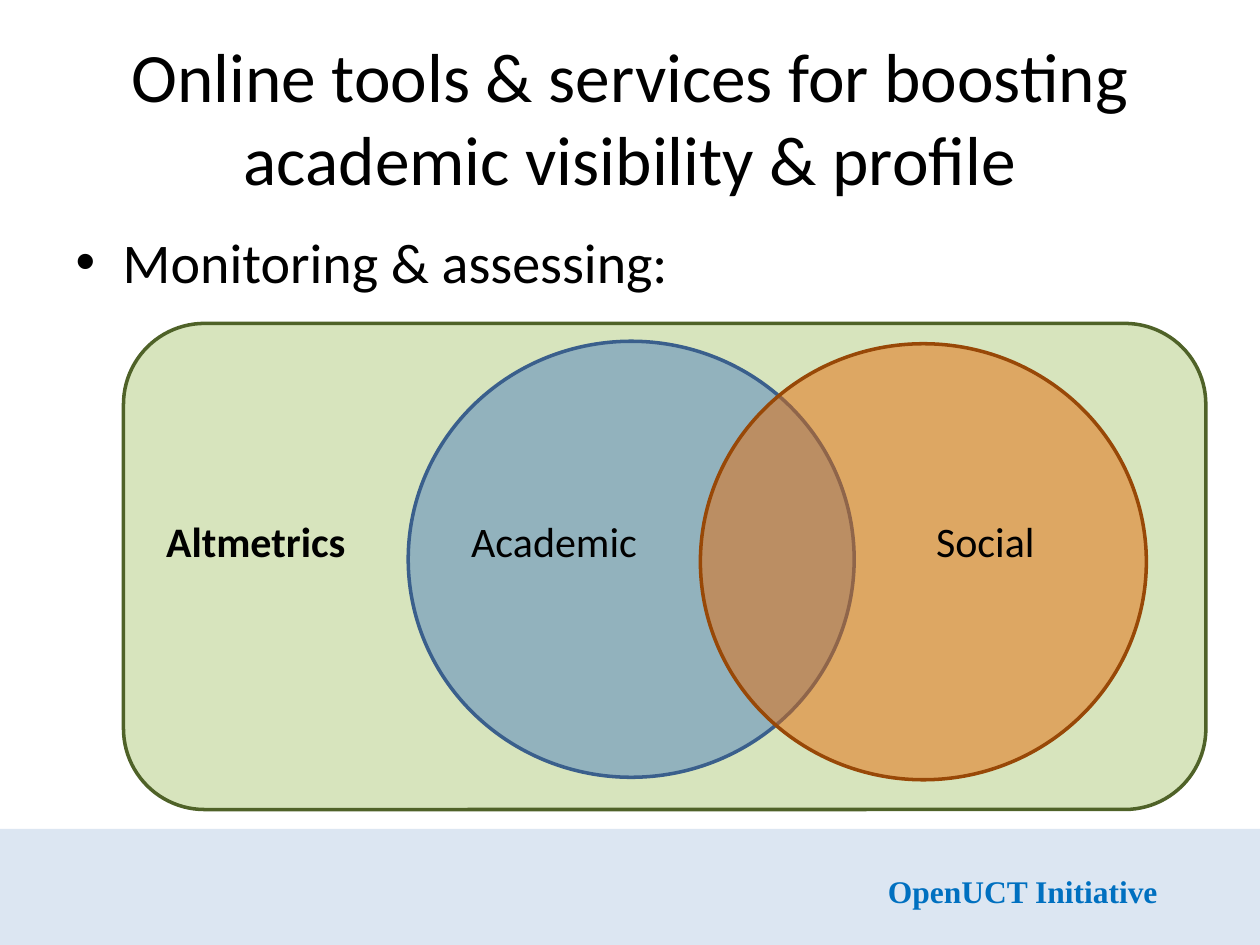
"""Build a slide with a Venn diagram of academic and social altmetrics."""
from dataclasses import dataclass

from lxml.etree import SubElement
from pptx import Presentation
from pptx.dml.color import RGBColor
from pptx.enum.shapes import MSO_SHAPE as Preset
from pptx.enum.text import MSO_ANCHOR as Anchor, MSO_AUTO_SIZE as AutoSize, PP_ALIGN as Align
from pptx.oxml.ns import qn
from pptx.util import Cm, Pt


@dataclass(frozen=True)
class Theme:
    font: str = "Calibri"
    footer_font: str = "Times New Roman"
    text: str = "000000"
    footer_text: str = "0070C0"
    footer_fill: str = "DCE6F2"
    title_size: float = 39.6
    body_size: float = 32
    label_size: float = 24
    footer_size: float = 18
    line_width: float = 2


THEME = Theme()
SLIDE_WIDTH, SLIDE_HEIGHT = 25.4, 19.05

TITLE = "Online tools & services for boosting academic visibility & profile"
BULLET = "Monitoring & assessing:"
FOOTER = "OpenUCT Initiative"

FRAME = {"box": (2.49, 6.52, 21.82, 9.8), "fill": "D7E4BD", "line": "4F6228"}
CIRCLE_SIZE = (8.99, 8.79)
CIRCLES = [
    {"corner": (8.23, 6.88), "fill": "4F81BD", "line": "3A5F8C"},
    {"corner": (14.12, 6.93), "fill": "E46C0A", "line": "984807"},
]
LABEL_TOP, LABEL_HEIGHT = 10.26, 1.28
LABELS = [
    ("Altmetrics", 3.1, 5.16, True),
    ("Academic", 9.25, 3.89, False),
    ("Social", 18.62, 3.89, False),
]
FOOTER_HEIGHT = 2.34


def lengths(box):
    return [Cm(value) for value in box]


def place(shape, box):
    shape.left, shape.top, shape.width, shape.height = lengths(box)


def write(shape, text, size, font=THEME.font, color=THEME.text, bold=False, align=Align.LEFT,
          anchor=Anchor.TOP, wrap=True, auto_size=AutoSize.NONE, bullet_indent=None):
    frame = shape.text_frame
    frame.word_wrap = wrap
    frame.auto_size = auto_size
    frame.vertical_anchor = anchor
    paragraph = frame.paragraphs[0]
    paragraph.text = text
    paragraph.alignment = align
    paragraph.space_before = Pt(0)
    if bullet_indent:
        properties = paragraph._p.get_or_add_pPr()
        properties.set("marL", str(Cm(bullet_indent)))
        properties.set("indent", str(-Cm(bullet_indent)))
        SubElement(properties, qn("a:buFont"), typeface="Arial")
        SubElement(properties, qn("a:buChar"), char="•")
    run_font = paragraph.runs[0].font
    run_font.name = font
    run_font.size = Pt(size)
    run_font.bold = bold
    run_font.color.rgb = RGBColor.from_string(color)


def add_shape(shapes, preset, box, fill, line=None, opacity=None):
    shape = shapes.add_shape(preset, *lengths(box))
    shape.shadow.inherit = False
    shape.fill.solid()
    shape.fill.fore_color.rgb = RGBColor.from_string(fill)
    if opacity:
        color = shape._element.spPr.find(qn("a:solidFill"))[0]
        SubElement(color, qn("a:alpha"), val=str(opacity * 1000))
    if line:
        shape.line.color.rgb = RGBColor.from_string(line)
        shape.line.width = Pt(THEME.line_width)
    else:
        shape.line.fill.background()
    return shape


def add_text(shapes, box, text, size, **formatting):
    shape = shapes.add_textbox(*lengths(box))
    write(shape, text, size, auto_size=AutoSize.SHAPE_TO_FIT_TEXT, **formatting)


def add_diagram(shapes):
    add_shape(shapes, Preset.ROUNDED_RECTANGLE, **FRAME)
    for circle in CIRCLES:
        add_shape(shapes, Preset.OVAL, circle["corner"] + CIRCLE_SIZE,
                  circle["fill"], circle["line"], opacity=50)
    for text, left, width, bold in LABELS:
        add_text(shapes, (left, LABEL_TOP, width, LABEL_HEIGHT), text, THEME.label_size, bold=bold)


def add_footer(shapes):
    group = shapes.add_group_shape()
    band = (0, SLIDE_HEIGHT - FOOTER_HEIGHT, SLIDE_WIDTH, FOOTER_HEIGHT)
    add_shape(group.shapes, Preset.RECTANGLE, band, THEME.footer_fill)
    add_text(group.shapes, (17.65, 17.45, 6, 1.02), FOOTER, THEME.footer_size,
             font=THEME.footer_font, color=THEME.footer_text, bold=True, wrap=False)


def main():
    presentation = Presentation()
    presentation.slide_width, presentation.slide_height = Cm(SLIDE_WIDTH), Cm(SLIDE_HEIGHT)
    slide = presentation.slides.add_slide(presentation.slide_layouts[1])
    title, body = slide.placeholders
    place(title, (1.27, 0.76, 22.86, 3.18))
    write(title, TITLE, THEME.title_size, align=Align.CENTER, anchor=Anchor.MIDDLE)
    place(body, (1.27, 4.45, 22.86, 12.57))
    write(body, BULLET, THEME.body_size, bullet_indent=0.95)
    add_diagram(slide.shapes)
    add_footer(slide.shapes)
    presentation.save("out.pptx")


if __name__ == "__main__":
    main()
